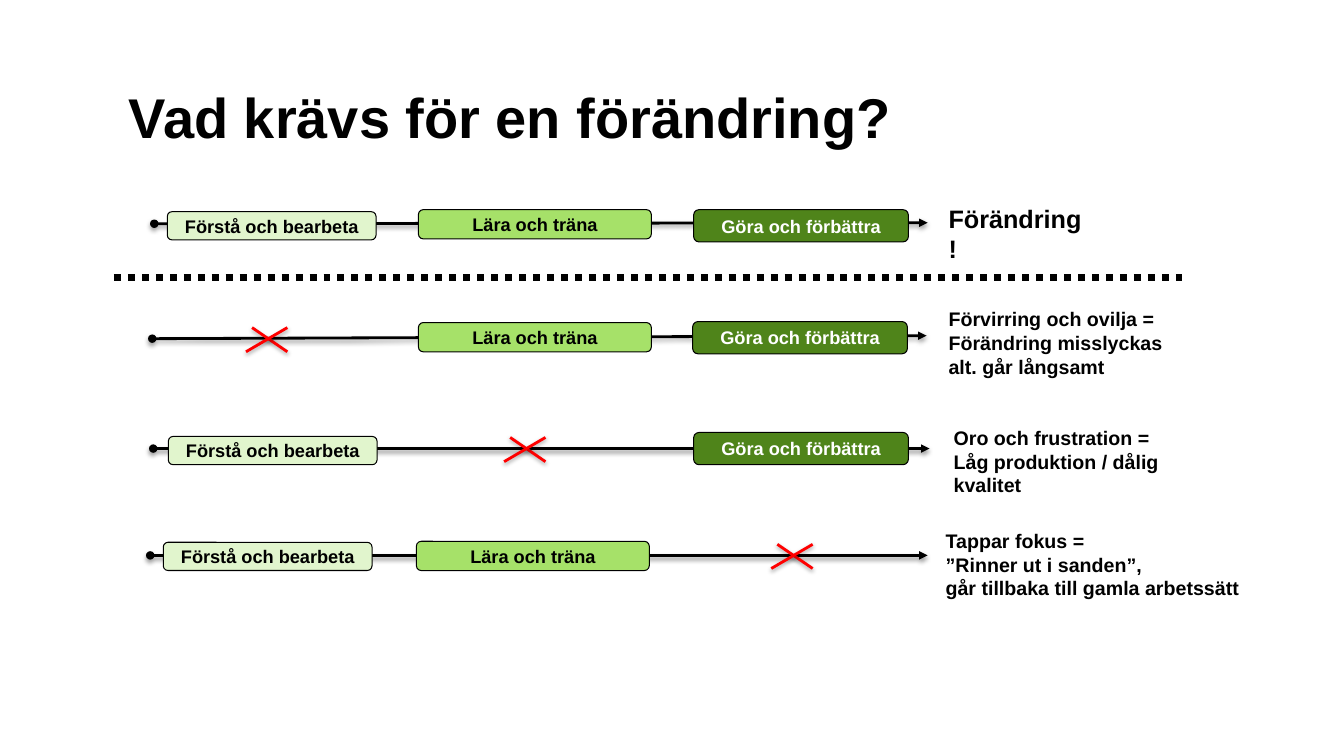
from dataclasses import dataclass

from lxml.etree import SubElement
from pptx import Presentation
from pptx.dml.color import RGBColor
from pptx.enum.dml import MSO_LINE
from pptx.enum.shapes import MSO_CONNECTOR, MSO_SHAPE
from pptx.enum.text import MSO_ANCHOR as Anchor, MSO_AUTO_SIZE as AutoSize, PP_ALIGN as Align
from pptx.oxml.ns import qn
from pptx.shapes.autoshape import Shape
from pptx.shapes.connector import Connector
from pptx.util import Emu, Pt

EMU_PER_PX = 9144  # 100 px to the inch
FONT = "Arial"
BLACK, WHITE, RED = "000000", "FFFFFF", "FF0000"

Point = tuple[int, int]


@dataclass(frozen=True)
class Step:
    label: str
    width: int
    height: int
    fill: str
    text_color: str = BLACK
    side_inset: int = 10


@dataclass(frozen=True)
class Outcome:
    text: str
    left: int
    top: int
    width: int
    height: int = 81
    size: int = 14


@dataclass(frozen=True)
class Chain:
    start: Point
    end: Point
    steps: list[tuple[Step, int, int]]
    outcome: Outcome
    cross: Point | None = None


UNDERSTAND = Step("Förstå och bearbeta", 207, 28, "E1F5CD")
LEARN = Step("Lära och träna", 231, 29, "A6E169")
IMPROVE = Step("Göra och förbättra", 213, 32, "4F841A", WHITE, 4)

CHAINS = [
    Chain((153, 222), (920, 221),
          [(UNDERSTAND, 166, 210), (LEARN, 415, 208), (IMPROVE, 688, 208)],
          Outcome("Förändring!", 931, 197, 158, 40, 18)),
    Chain((151, 336), (919, 333),
          [(LEARN, 415, 320), (IMPROVE, 687, 319)],
          Outcome("Förvirring och ovilja = Förändring misslyckas alt. går långsamt", 931, 300, 240),
          (244, 325)),
    Chain((152, 445), (922, 445),
          [(UNDERSTAND, 167, 433), (IMPROVE, 688, 429)],
          Outcome("Oro och frustration = Låg produktion / dålig kvalitet", 936, 418, 236),
          (500, 434)),
    Chain((149, 551), (920, 551),
          [(UNDERSTAND, 162, 538), (LEARN, 413, 537)],
          Outcome("Tappar fokus =\n”Rinner ut i sanden”,\ngår tillbaka till gamla arbetssätt",
                  928, 520, 355),
          (765, 540)),
]


def px(length: int) -> Emu:
    return Emu(length * EMU_PER_PX)


def rgb(color: str) -> RGBColor:
    return RGBColor.from_string(color)


def write(shape: Shape, text: str, *, size: int, color: str = BLACK,
          align: Align = Align.LEFT, anchor: Anchor = Anchor.TOP,
          side_inset: int = 10, grow: bool = False) -> None:
    frame = shape.text_frame
    frame.word_wrap = True
    frame.auto_size = AutoSize.SHAPE_TO_FIT_TEXT if grow else AutoSize.NONE
    frame.vertical_anchor = anchor
    frame.margin_left = frame.margin_right = px(side_inset)
    frame.margin_top = frame.margin_bottom = px(5)
    paragraph = frame.paragraphs[0]
    paragraph.text = text
    paragraph.alignment = align
    for run in paragraph.runs:
        run.font.name = FONT
        run.font.size = Pt(size)
        run.font.bold = True
        run.font.color.rgb = rgb(color)


def draw_line(shapes, start: Point, end: Point, *, color: str = BLACK,
              weight: int = 2, shadow_percent: int = 0) -> Connector:
    line = shapes.add_connector(MSO_CONNECTOR.STRAIGHT, *map(px, start + end))
    line.line.color.rgb = rgb(color)
    line.line.width = Pt(weight)
    effects = SubElement(line._element.spPr, qn("a:effectLst"))
    if shadow_percent:
        shadow = SubElement(effects, qn("a:outerShdw"), blurRad=str(Pt(3.1)),
                            dist=str(Pt(1.6)), dir="5400000", rotWithShape="0")
        shade = SubElement(shadow, qn("a:srgbClr"), val=BLACK)
        SubElement(shade, qn("a:alpha"), val=str(shadow_percent * 1000))
    return line


def draw_track(shapes, chain: Chain) -> None:
    """Draw the arrow that starts in a dot and carries the steps."""
    track = draw_line(shapes, chain.start, chain.end, shadow_percent=38)
    outline = track.line._get_or_add_ln()
    SubElement(outline, qn("a:headEnd"), type="oval")
    SubElement(outline, qn("a:tailEnd"), type="triangle")


def draw_step(shapes, step: Step, left: int, top: int) -> None:
    box = shapes.add_shape(MSO_SHAPE.ROUNDED_RECTANGLE,
                           *map(px, (left, top, step.width, step.height)))
    box.shadow.inherit = False
    box.fill.solid()
    box.fill.fore_color.rgb = rgb(step.fill)
    box.line.color.rgb = rgb(BLACK)
    box.line.width = Pt(0.75)
    write(box, step.label, size=13, color=step.text_color, align=Align.CENTER,
          anchor=Anchor.MIDDLE, side_inset=step.side_inset)


def draw_cross(shapes, left: int, top: int) -> None:
    strokes = shapes.add_group_shape().shapes
    right, bottom = left + 41, top + 24
    for start, end in (((left + 6, top), (right, bottom)), ((left, bottom), (right, top))):
        draw_line(strokes, start, end, color=RED, shadow_percent=35)


def draw_outcome(shapes, outcome: Outcome) -> None:
    box = shapes.add_textbox(*map(px, (outcome.left, outcome.top, outcome.width, outcome.height)))
    write(box, outcome.text, size=outcome.size, grow=True)


def main() -> None:
    deck = Presentation()
    deck.slide_width, deck.slide_height = px(1333), px(750)
    shapes = deck.slides.add_slide(deck.slide_layouts[6]).shapes

    title = shapes.add_textbox(*map(px, (118, 79, 1127, 74)))
    write(title, "Vad krävs för en förändring?", size=40, anchor=Anchor.BOTTOM)

    divider = draw_line(shapes, (113, 275), (1172, 275), weight=5)
    divider.line.dash_style = MSO_LINE.ROUND_DOT

    for chain in CHAINS:
        draw_track(shapes, chain)
        for step, left, top in chain.steps:
            draw_step(shapes, step, left, top)
        if chain.cross:
            draw_cross(shapes, *chain.cross)
        draw_outcome(shapes, chain.outcome)

    deck.save("out.pptx")


if __name__ == "__main__":
    main()
